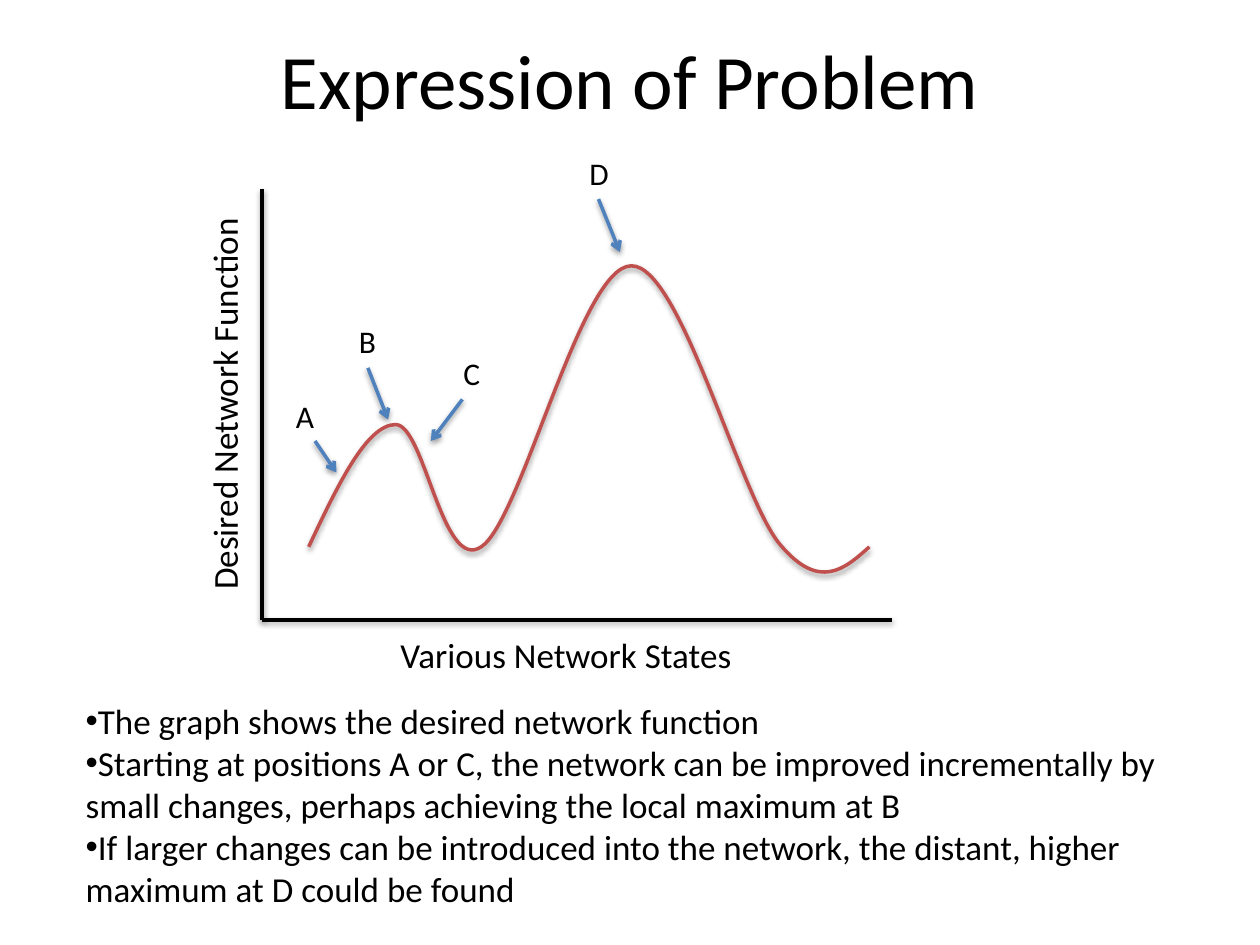
from lxml.etree import SubElement
from pptx import Presentation
from pptx.dml.color import RGBColor
from pptx.enum.shapes import MSO_CONNECTOR
from pptx.enum.text import MSO_ANCHOR, MSO_AUTO_SIZE, PP_ALIGN
from pptx.oxml.ns import qn
from pptx.util import Inches, Pt

COLORS = {"ink": "000000", "curve": "C0504D", "pointer": "4F81BD"}
FONT = "Calibri"
TITLE = "Expression of Problem"
BULLETS = [
    "The graph shows the desired network function",
    "Starting at positions A or C, the network can be improved incrementally by "
    "small changes, perhaps achieving the local maximum at B",
    "If larger changes can be introduced into the network, the distant, higher "
    "maximum at D could be found",
]
AXES = [((2.08, 1.5), (2.08, 4.92)), ((7.08, 4.92), (2.08, 4.92))]
AXIS_LABELS = [
    ("Desired Network Function", (0.19, 2.97, 3.18, 0.44), 270),
    ("Various Network States", (3.08, 4.98, 2.86, 0.44), 0),
]
MARKERS = [
    ("A", (2.25, 3.1), (2.5, 3.5), (2.67, 3.75)),
    ("B", (2.75, 2.51), (2.92, 2.92), (3.08, 3.33)),
    ("C", (3.58, 2.76), (3.67, 3.17), (3.42, 3.5)),
    ("D", (4.58, 1.17), (4.75, 1.58), (4.92, 2)),
]
MARKER_SIZE = (0.33, 0.4)
CURVE_START = (2.45, 4.34)
CURVE_BEZIERS = [
    ((2.68, 3.85), (2.91, 3.37), (3.14, 3.37)),
    ((3.37, 3.37), (3.51, 4.55), (3.82, 4.34)),
    ((4.14, 4.13), (4.61, 2.11), (5.01, 2.11)),
    ((5.4, 2.1), (5.87, 3.94), (6.19, 4.32)),
    ((6.5, 4.69), (6.7, 4.52), (6.9, 4.34)),
]


def rgb(name):
    """Return the named palette colour."""
    return RGBColor.from_string(COLORS[name])


def place(shape, box):
    """Move and size a shape in inches."""
    shape.left, shape.top, shape.width, shape.height = map(Inches, box)


def write(paragraph, text, size):
    """Add one formatted run to a paragraph."""
    run = paragraph.add_run()
    run.text = text
    run.font.name, run.font.size = FONT, Pt(size)
    run.font.color.rgb = rgb("ink")


def style_stroke(shape, color, arrow=False):
    """Set line colour, width, optional arrowhead and soft shadow."""
    shape.line.color.rgb = rgb(color)
    shape.line.width = Pt(2)
    properties = shape._element.spPr
    if arrow:
        SubElement(properties.find(qn("a:ln")), qn("a:tailEnd"), type="arrow")
    effects = SubElement(properties, qn("a:effectLst"))
    shadow = SubElement(effects, qn("a:outerShdw"), blurRad=str(Pt(3.1)),
                        dist=str(Pt(1.6)), dir="5400000", rotWithShape="0")
    tint = SubElement(shadow, qn("a:srgbClr"), val=COLORS["ink"])
    SubElement(tint, qn("a:alpha"), val="38000")


def add_stroke(slide, start, end, color, arrow=False):
    """Add a straight line between two points."""
    stroke = slide.shapes.add_connector(
        MSO_CONNECTOR.STRAIGHT, *map(Inches, start + end))
    style_stroke(stroke, color, arrow)


def add_label(slide, text, box, size, wrap, rotation=0):
    """Add a text label that grows with its content."""
    label = slide.shapes.add_textbox(*map(Inches, box))
    label.rotation = rotation
    label.text_frame.word_wrap = wrap
    label.text_frame.auto_size = MSO_AUTO_SIZE.SHAPE_TO_FIT_TEXT
    write(label.text_frame.paragraphs[0], text, size)


def add_curve(slide):
    """Draw the function as a chain of cubic Bezier segments."""
    builder = slide.shapes.build_freeform(*map(Inches, CURVE_START))
    builder.add_line_segments(
        [(Inches(x), Inches(y)) for bezier in CURVE_BEZIERS for x, y in bezier],
        close=False)
    curve = builder.convert_to_shape()
    outline = next(curve._element.iter(qn("a:path")))
    segments = outline.findall(qn("a:lnTo"))
    for first in range(0, len(segments), 3):
        bezier = SubElement(outline, qn("a:cubicBezTo"))
        for segment in segments[first:first + 3]:
            bezier.append(segment[0])
            outline.remove(segment)
    curve.fill.background()
    style_stroke(curve, "curve")


def add_title(slide):
    """Fill the title placeholder."""
    title = slide.shapes.title
    place(title, (0.5, 0, 9, 1.25))
    title.text_frame.vertical_anchor = MSO_ANCHOR.MIDDLE
    heading = title.text_frame.paragraphs[0]
    heading.alignment = PP_ALIGN.CENTER
    write(heading, TITLE, 44)


def add_bullets(slide):
    """Fill the body placeholder with flush bullets."""
    body = slide.placeholders[1]
    place(body, (0.58, 5.5, 9, 1.78))
    frame = body.text_frame
    frame.auto_size = MSO_AUTO_SIZE.SHAPE_TO_FIT_TEXT
    for index, text in enumerate(BULLETS):
        paragraph = frame.add_paragraph() if index else frame.paragraphs[0]
        paragraph.space_before = Pt(0)
        properties = paragraph._p.get_or_add_pPr()
        properties.set("marL", "0")
        properties.set("indent", "0")
        SubElement(properties, qn("a:buChar"), char="•")
        write(paragraph, text, 20)


def main():
    """Build the slide and save it."""
    deck = Presentation()
    deck.slide_width, deck.slide_height = Inches(10), Inches(7.5)
    slide = deck.slides.add_slide(deck.slide_layouts[1])
    add_title(slide)
    for start, end in AXES:
        add_stroke(slide, start, end, "ink")
    add_curve(slide)
    for text, box, rotation in AXIS_LABELS:
        add_label(slide, text, box, 20, False, rotation)
    for letter, corner, start, end in MARKERS:
        add_stroke(slide, start, end, "pointer", arrow=True)
        add_label(slide, letter, corner + MARKER_SIZE, 18, True)
    add_bullets(slide)
    deck.save("out.pptx")


if __name__ == "__main__":
    main()
